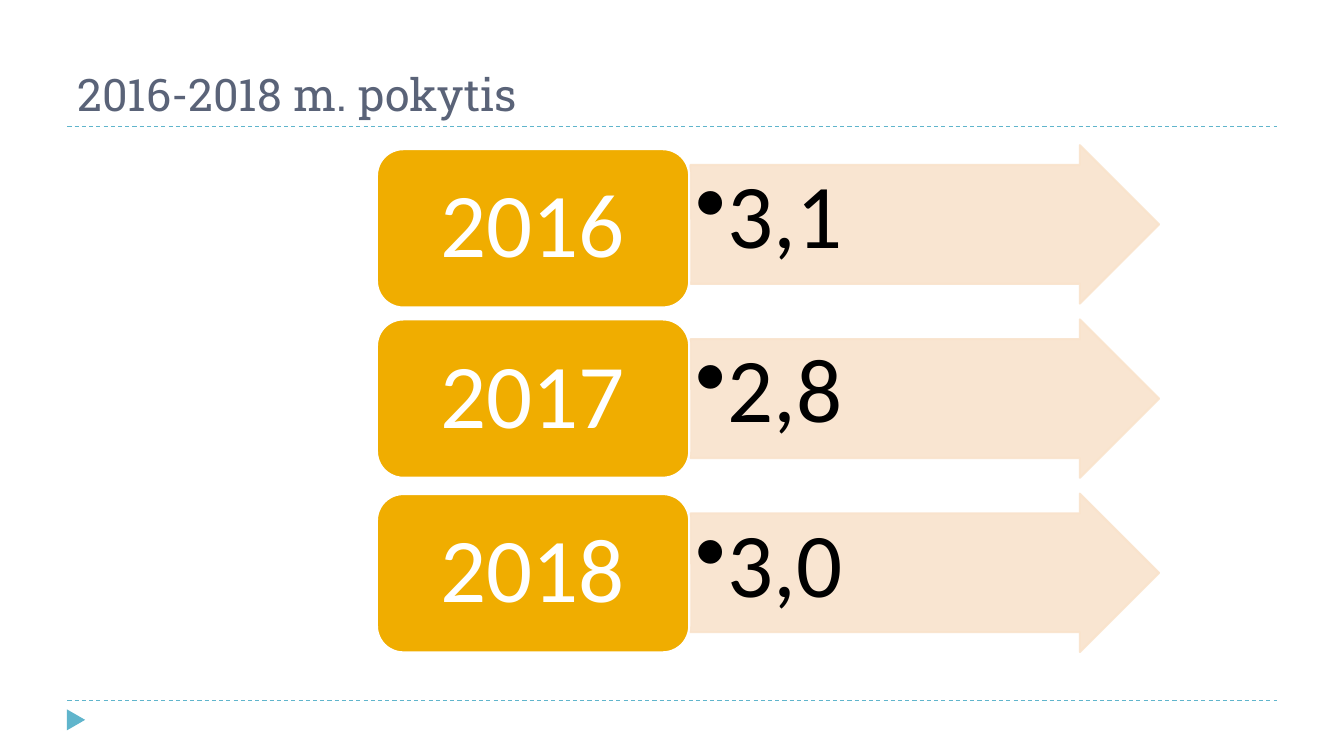
from lxml import etree
from pptx import Presentation
from pptx.dml.color import RGBColor
from pptx.enum.dml import MSO_LINE
from pptx.enum.shapes import MSO_CONNECTOR, MSO_SHAPE
from pptx.enum.text import MSO_ANCHOR, PP_ALIGN
from pptx.oxml.ns import qn
from pptx.util import Cm, Pt

COLORS = {
    "rule": "60B5CC",
    "title": "5A6378",
    "year": "F0AD00",
    "arrow": "F9E3CC",
    "white": "FFFFFF",
    "black": "000000",
}
CHANGES = [("2016", "3,1", 3.76), ("2017", "2,8", 8.05), ("2018", "3,0", 12.45)]
ARROW_TOP, ARROW_STEP = 3.66, 4.39
ROW_HEIGHT = 3.99


def color(name):
    return RGBColor.from_string(COLORS[name])


def add_rule(page, top):
    rule = page.shapes.add_connector(
        MSO_CONNECTOR.STRAIGHT, Cm(1.7), Cm(top), Cm(32.18), Cm(top))
    rule.line.color.rgb = color("rule")
    rule.line.width = Pt(0.75)
    rule.line.dash_style = MSO_LINE.DASH
    etree.SubElement(rule._element.spPr, qn("a:effectLst"))


def add_filled(page, kind, left, top, width, height, fill, outline=None):
    shape = page.shapes.add_shape(kind, Cm(left), Cm(top), Cm(width), Cm(height))
    shape.shadow.inherit = False
    shape.fill.solid()
    shape.fill.fore_color.rgb = color(fill)
    if outline:
        shape.line.color.rgb = color(outline)
        shape.line.width = Pt(1.5)
    else:
        shape.line.fill.background()
    return shape


def write(shape, text, size, font, ink, align, anchor, inset_x, inset_y):
    """Fill the shape with one paragraph and return that paragraph."""
    frame = shape.text_frame
    frame.word_wrap = True
    frame.vertical_anchor = anchor
    frame.margin_left = frame.margin_right = Cm(inset_x)
    frame.margin_top = frame.margin_bottom = Cm(inset_y)
    para = frame.paragraphs[0]
    para.alignment = align
    span = para.add_run()
    span.text = text
    span.font.size = Pt(size)
    span.font.name = font
    span.font.color.rgb = color(ink)
    return para


def add_bullet(para, indent):
    props = para._p.get_or_add_pPr()
    props.set("marL", str(Cm(indent)))
    props.set("indent", str(-Cm(indent)))
    etree.SubElement(props, qn("a:buChar"), char="•")


def set_opacity(shape, percent):
    """Make both the fill and the outline partly see-through."""
    for paint in shape._element.spPr.iter(qn("a:srgbClr")):
        etree.SubElement(paint, qn("a:alpha"), val=str(percent * 1000))


def add_title(page, text):
    box = page.shapes.add_textbox(Cm(1.7), Cm(0.43), Cm(30.48), Cm(2.74))
    write(box, text, 32, "Roboto Slab", "title",
          PP_ALIGN.LEFT, MSO_ANCHOR.BOTTOM, 0.25, 0.13)


def add_value_arrow(page, value, top):
    arrow = add_filled(page, MSO_SHAPE.RIGHT_ARROW, 17.4, top, 11.81, ROW_HEIGHT,
                       "arrow", "arrow")
    arrow.adjustments[0] = 0.75
    set_opacity(arrow, 90)
    para = write(arrow, value, 65, "Calibri", "black",
                 PP_ALIGN.LEFT, MSO_ANCHOR.TOP, 0.13, 0.13)
    para.line_spacing = 0.9
    add_bullet(para, 0.79)


def add_year_box(page, year, top):
    box = add_filled(page, MSO_SHAPE.ROUNDED_RECTANGLE, 9.5, top, 7.87, ROW_HEIGHT,
                     "year", "white")
    para = write(box, year, 65, "Calibri", "white",
                 PP_ALIGN.CENTER, MSO_ANCHOR.MIDDLE, 0.69, 0.36)
    para.line_spacing = 0.9


def main():
    deck = Presentation()
    deck.slide_width, deck.slide_height = Cm(33.87), Cm(19.05)
    page = deck.slides.add_slide(deck.slide_layouts[6])

    for top in (17.65, 3.18):
        add_rule(page, top)
    marker = add_filled(page, MSO_SHAPE.ISOSCELES_TRIANGLE,
                        1.65, 17.91, 0.53, 0.46, "rule")
    marker.rotation = 90
    add_title(page, "2016-2018 m. pokytis")

    for row, (year, value, year_top) in enumerate(CHANGES):
        add_value_arrow(page, value, ARROW_TOP + row * ARROW_STEP)
        add_year_box(page, year, year_top)
    deck.save("out.pptx")


if __name__ == "__main__":
    main()
